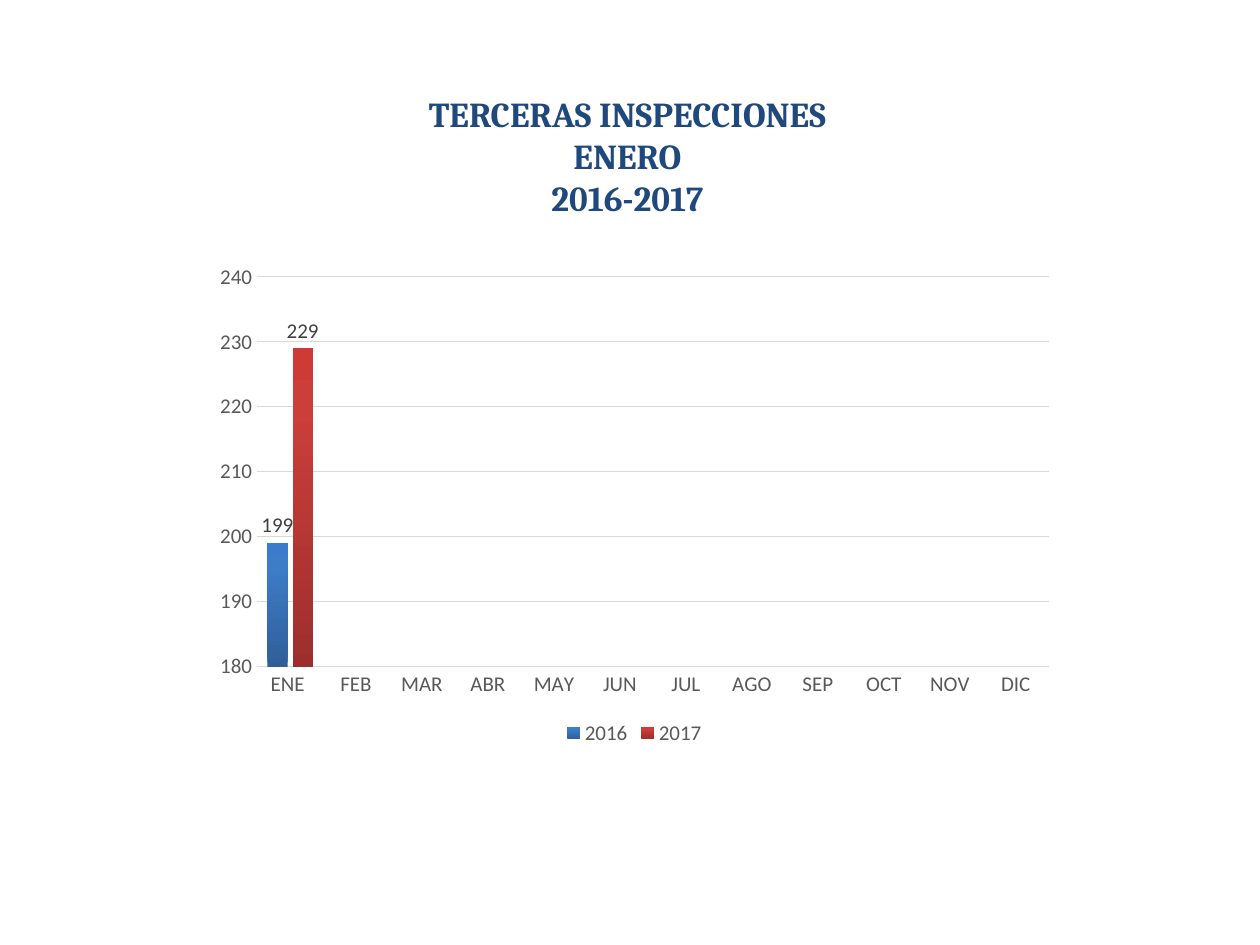
from copy import deepcopy
from dataclasses import dataclass

from pptx import Presentation
from pptx.chart.data import CategoryChartData
from pptx.dml.color import RGBColor
from pptx.enum.chart import (XL_CHART_TYPE, XL_LABEL_POSITION,
                             XL_LEGEND_POSITION, XL_TICK_MARK)
from pptx.enum.text import MSO_ANCHOR, MSO_AUTO_SIZE, PP_ALIGN
from pptx.util import Cm, Pt


@dataclass(frozen=True)
class Theme:
    heading_font: str = "Cambria"
    chart_font: str = "Calibri"
    heading_size: int = 20
    chart_size: int = 12
    heading: str = "1F497D"
    axis_text: str = "595959"
    value_text: str = "404040"
    rule: str = "D9D9D9"


THEME = Theme()

HEADING = ("TERCERAS INSPECCIONES", "ENERO", "2016-2017")
MONTHS = ("ENE ", "FEB", "MAR", "ABR", "MAY", "JUN",
          "JUL", "AGO", "SEP", "OCT", "NOV", "DIC")
JANUARY_INSPECTIONS = {"2016": 199, "2017": 229}
# Bar colours from foot to top
YEAR_GRADIENTS = {
    "2016": ("2F5F99", "3D7CC7", "3A7CCB"),
    "2017": ("9C2F2D", "CB3E3A", "CE3B37"),
}
GRADIENT_POSITIONS = (0, 0.8, 1)


def apply_format(target, values):
    for name, value in values.items():
        setattr(target, name, value)


def format_font(font, name, size, colour, bold=False):
    apply_format(font, {"name": name, "size": Pt(size), "bold": bold})
    font.color.rgb = RGBColor.from_string(colour)


def format_chart_font(font, colour=THEME.axis_text):
    format_font(font, THEME.chart_font, THEME.chart_size, colour)


def format_rule(line, width):
    line.color.rgb = RGBColor.from_string(THEME.rule)
    line.width = Pt(width)


def add_heading(slide):
    heading = slide.shapes.title
    apply_format(heading, {"left": Cm(6.3), "top": Cm(1.73),
                           "width": Cm(12.7), "height": Cm(2.82)})
    frame = heading.text_frame
    frame.text = "\n".join(HEADING)
    apply_format(frame, {"word_wrap": True,
                         "vertical_anchor": MSO_ANCHOR.TOP,
                         "auto_size": MSO_AUTO_SIZE.SHAPE_TO_FIT_TEXT})
    for paragraph in frame.paragraphs:
        apply_format(paragraph, {"alignment": PP_ALIGN.CENTER,
                                 "space_before": Pt(0)})
        format_font(paragraph.font, THEME.heading_font, THEME.heading_size,
                    THEME.heading, bold=True)


def fill_bars(year):
    fill = year.format.fill
    fill.gradient()
    fill.gradient_angle = 90
    # A new gradient has two stops; the bars need three
    stop_list = year._element.xpath(".//a:gsLst")[0]
    stop_list.append(deepcopy(stop_list[-1]))
    stops = zip(fill.gradient_stops, GRADIENT_POSITIONS,
                YEAR_GRADIENTS[year.name])
    for stop, position, colour in stops:
        stop.position = position
        stop.color.rgb = RGBColor.from_string(colour)


def label_bars(year):
    labels = year.data_labels
    apply_format(labels, {"show_value": True,
                          "position": XL_LABEL_POSITION.OUTSIDE_END})
    format_chart_font(labels.font, THEME.value_text)


def format_axes(chart):
    months, inspections = chart.category_axis, chart.value_axis
    for axis in (months, inspections):
        apply_format(axis, {"major_tick_mark": XL_TICK_MARK.NONE,
                            "minor_tick_mark": XL_TICK_MARK.NONE})
        format_chart_font(axis.tick_labels.font)
    format_rule(months.format.line, 1)
    apply_format(inspections, {"minimum_scale": 180, "maximum_scale": 240,
                               "major_unit": 10, "has_major_gridlines": True})
    inspections.format.line.fill.background()
    format_rule(inspections.major_gridlines.format.line, 0.75)


def add_inspections_chart(slide):
    data = CategoryChartData()
    data.categories = MONTHS
    for year, january in JANUARY_INSPECTIONS.items():
        data.add_series(year, [january] + [None] * (len(MONTHS) - 1))
    chart = slide.shapes.add_chart(
        XL_CHART_TYPE.COLUMN_CLUSTERED,
        Cm(4.09), Cm(5.13), Cm(17.4), Cm(10), data).chart
    apply_format(chart, {"has_title": False, "has_legend": True})
    format_chart_font(chart.font)

    # Bars
    plot = chart.plots[0]
    apply_format(plot, {"gap_width": 100, "overlap": -24,
                        "vary_by_categories": False})
    for year in plot.series:
        fill_bars(year)
        label_bars(year)

    # Axes and legend
    format_axes(chart)
    apply_format(chart.legend, {"position": XL_LEGEND_POSITION.BOTTOM,
                                "include_in_layout": False})
    format_chart_font(chart.legend.font)


def main():
    presentation = Presentation()
    apply_format(presentation, {"slide_width": Cm(25.4),
                                "slide_height": Cm(19.05)})
    slide = presentation.slides.add_slide(presentation.slide_layouts[5])
    add_heading(slide)
    add_inspections_chart(slide)
    presentation.save("out.pptx")


if __name__ == "__main__":
    main()
